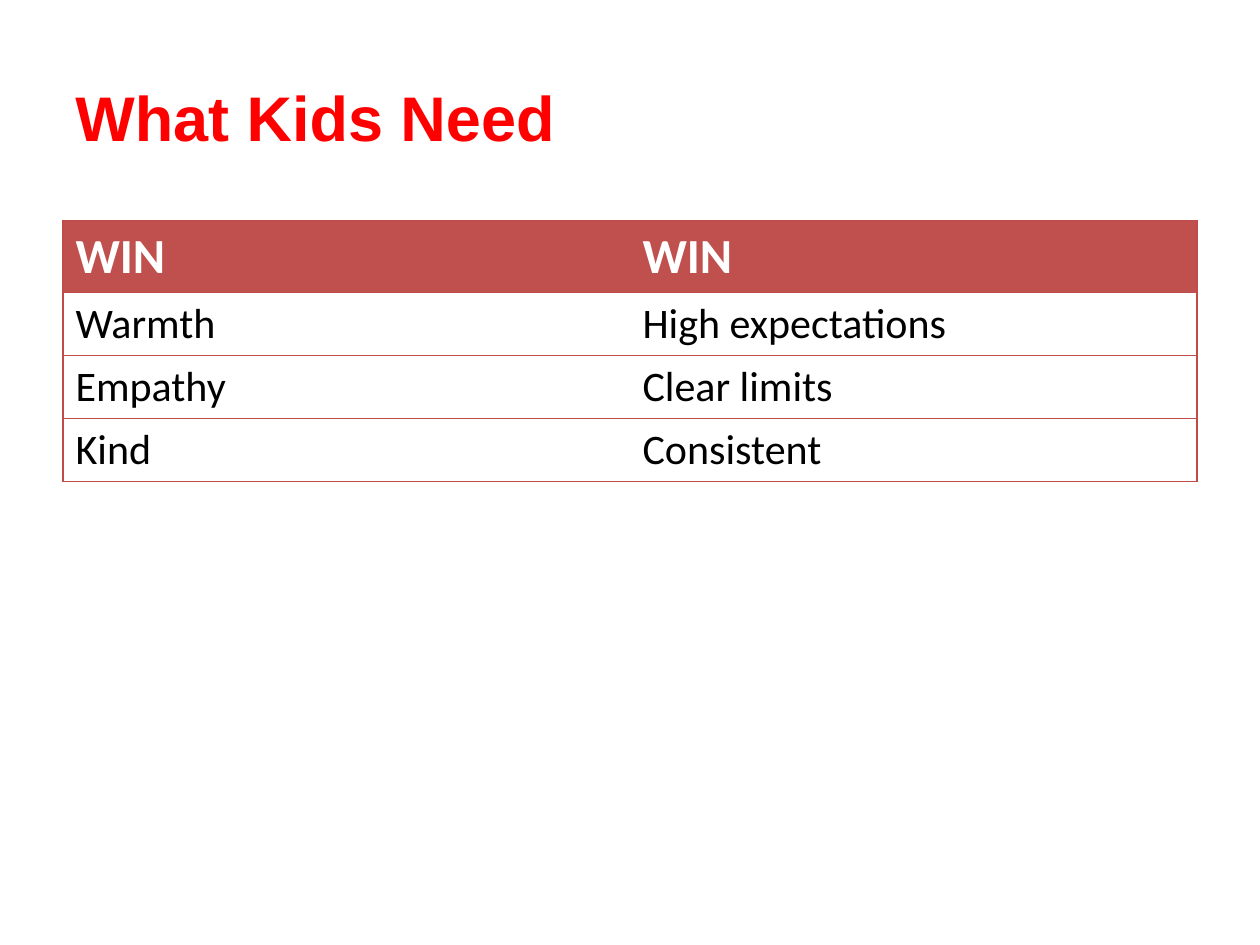
from lxml import etree
from pptx import Presentation
from pptx.dml.color import RGBColor
from pptx.enum.text import MSO_ANCHOR
from pptx.oxml.ns import qn
from pptx.util import Inches, Pt

MIDDLE = MSO_ANCHOR.MIDDLE
COLORS = {
    "title": "FF0000",
    "header": "C0504D",
    "border": "BF4C48",
    "white": "FFFFFF",
    "black": "000000",
}
ROWS = [
    ("WIN", "WIN"),
    ("Warmth", "High expectations"),
    ("Empathy", "Clear limits"),
    ("Kind", "Consistent"),
]
HEADER_HEIGHT, BODY_HEIGHT = Inches(0.57), Inches(0.5)


def style_font(paragraph, name, size, color, bold):
    paragraph.font.name = name
    paragraph.font.size = Pt(size)
    paragraph.font.bold = bold
    paragraph.font.color.rgb = RGBColor.from_string(COLORS[color])


def set_borders(cell, visible_sides):
    """Draw the named sides (L, R, T, B) and hide the others."""
    properties = cell._tc.get_or_add_tcPr()
    for index, side in enumerate("LRTB"):
        line = etree.Element(qn(f"a:ln{side}"), w=str(Pt(0.75)))
        if side in visible_sides:
            fill = etree.SubElement(line, qn("a:solidFill"))
            etree.SubElement(fill, qn("a:srgbClr"), val=COLORS["border"])
        else:
            etree.SubElement(line, qn("a:noFill"))
        properties.insert(index, line)


presentation = Presentation()
presentation.slide_width = Inches(10)
presentation.slide_height = Inches(7.5)
slide = presentation.slides.add_slide(presentation.slide_layouts[6])

title = slide.shapes.add_textbox(Inches(0.5), Inches(0.3), Inches(9), Inches(1.25))
title.text_frame.word_wrap = True
title.text_frame.vertical_anchor = MIDDLE
title.text_frame.text = "What Kids Need"
style_font(title.text_frame.paragraphs[0], "Arial", 36, "title", True)

table_height = HEADER_HEIGHT + BODY_HEIGHT * (len(ROWS) - 1)
table = slide.shapes.add_table(
    len(ROWS), 2, Inches(0.5), Inches(1.75), Inches(9), table_height
).table
table.horz_banding = False

for row_index, texts in enumerate(ROWS):
    is_header = row_index == 0
    table.rows[row_index].height = HEADER_HEIGHT if is_header else BODY_HEIGHT
    for column_index, text in enumerate(texts):
        cell = table.cell(row_index, column_index)
        cell.text = text
        cell.fill.solid()
        cell.fill.fore_color.rgb = RGBColor.from_string(
            COLORS["header" if is_header else "white"]
        )
        style_font(
            cell.text_frame.paragraphs[0],
            "Calibri",
            28 if is_header else 24,
            "white" if is_header else "black",
            is_header,
        )
        set_borders(cell, "LTB" if column_index == 0 else "RTB")

presentation.save("out.pptx")
